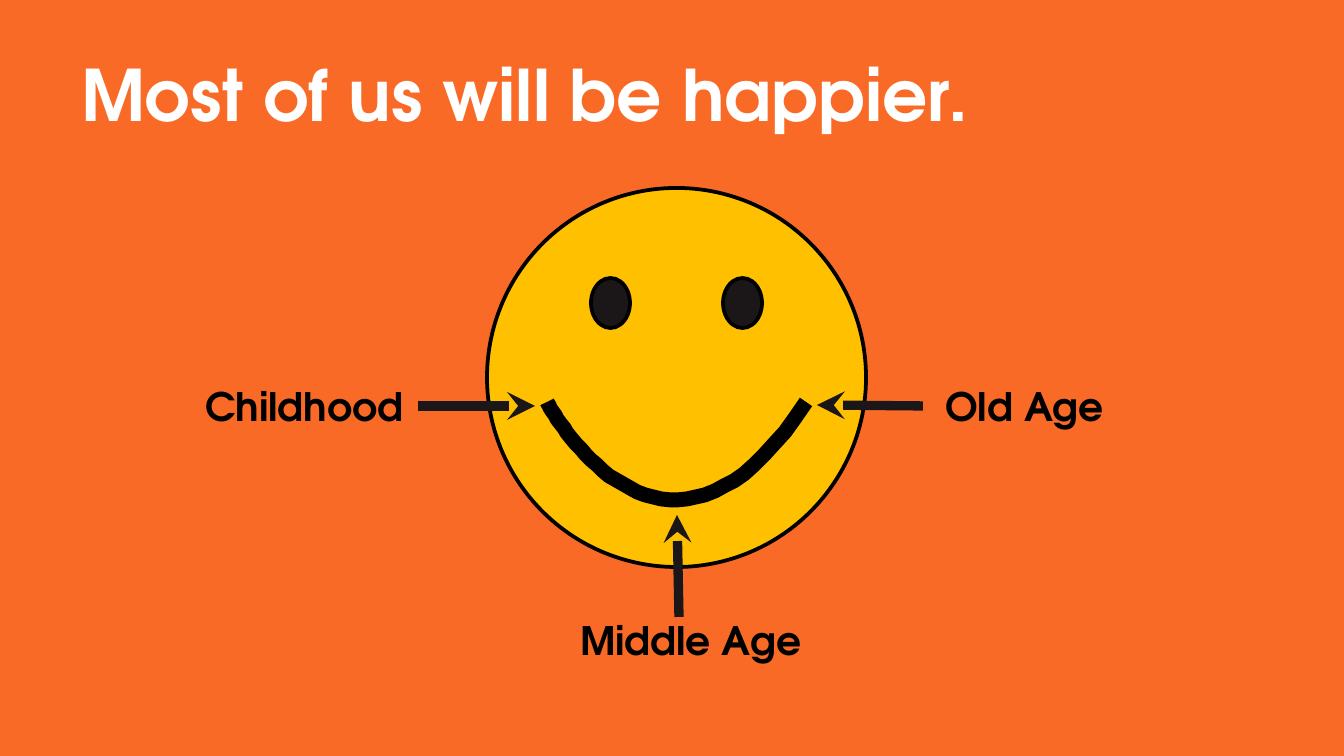
from dataclasses import dataclass

import pptx
import pptx.dml.color
import pptx.enum.shapes
import pptx.enum.text
import pptx.oxml
import pptx.oxml.ns
import pptx.util
from lxml import etree

PX = 914400 / 134.4  # EMU in one px


@dataclass(frozen=True)
class Theme:
    font: str = "TeX Gyre Adventor"
    background: str = "F96A27"
    face: str = "FFC000"
    dark: str = "1B1718"
    black: str = "000000"
    white: str = "FFFFFF"
    title_size: int = 38
    label_size: int = 21
    outline: int = 2
    arrow: int = 5
    smile: int = 8


@dataclass(frozen=True)
class Oval:
    left: int
    top: int
    width: int
    height: int
    color: str


@dataclass(frozen=True)
class Stage:
    name: str
    left: int
    top: int
    width: int
    tail: tuple[int, int]
    tip: tuple[int, int]


THEME = Theme()
EYE_LEFTS = (723, 591)
SMILE = ((547, 402), (547, 402), (663, 622), (806, 402))
SMILE_STEPS = 40
LABEL_HEIGHT = 54
STAGES = (
    Stage("Childhood", 202, 379, 208, (418, 406), (535, 406)),
    Stage("Old Age", 942, 379, 168, (923, 406), (817, 405)),
    Stage("Middle Age", 577, 613, 230, (679, 617), (677, 515)),
)


def emu(px: float) -> int:
    return round(px * PX)


def rgb(color: str) -> pptx.dml.color.RGBColor:
    return pptx.dml.color.RGBColor.from_string(color)


def set_line(shape, color: str, width: int) -> None:
    shape.line.color.rgb = rgb(color)
    shape.line.width = pptx.util.Pt(width)


def write(box, text: str, *, size: int, color: str) -> None:
    frame = box.text_frame
    frame.word_wrap = True
    frame.auto_size = pptx.enum.text.MSO_AUTO_SIZE.NONE
    frame.vertical_anchor = pptx.enum.text.MSO_ANCHOR.MIDDLE
    frame.margin_left = frame.margin_right = emu(3)
    frame.margin_top = frame.margin_bottom = emu(3)
    para = frame.paragraphs[0]
    para.alignment = pptx.enum.text.PP_ALIGN.LEFT
    span = para.add_run()
    span.text = text
    span.font.name = THEME.font
    span.font.size = pptx.util.Pt(size)
    span.font.bold = True
    span.font.color.rgb = rgb(color)


def draw_oval(page, oval: Oval) -> None:
    shape = page.shapes.add_shape(
        pptx.enum.shapes.MSO_SHAPE.OVAL,
        emu(oval.left), emu(oval.top), emu(oval.width), emu(oval.height))
    shape.shadow.inherit = False
    shape.fill.solid()
    shape.fill.fore_color.rgb = rgb(oval.color)
    set_line(shape, THEME.black, THEME.outline)


def curve_point(t: float) -> tuple[float, float]:
    """Point of the smile's cubic Bézier curve at t."""
    weights = ((1 - t) ** 3, 3 * t * (1 - t) ** 2, 3 * t * t * (1 - t), t ** 3)
    return tuple(sum(w * point[axis] for w, point in zip(weights, SMILE))
                 for axis in (0, 1))


def draw_smile(page) -> None:
    start, *rest = [curve_point(step / SMILE_STEPS)
                    for step in range(SMILE_STEPS + 1)]
    builder = page.shapes.build_freeform(*start, scale=PX)
    builder.add_line_segments(rest, close=False)
    smile = builder.convert_to_shape()
    smile.shadow.inherit = False
    smile.fill.background()
    set_line(smile, THEME.black, THEME.smile)


def draw_stage(page, stage: Stage) -> None:
    label = page.shapes.add_textbox(
        emu(stage.left), emu(stage.top), emu(stage.width), emu(LABEL_HEIGHT))
    write(label, stage.name, size=THEME.label_size, color=THEME.black)

    arrow = page.shapes.add_connector(
        pptx.enum.shapes.MSO_CONNECTOR.STRAIGHT,
        *(emu(value) for value in stage.tail + stage.tip))
    set_line(arrow, THEME.dark, THEME.arrow)
    qn = pptx.oxml.ns.qn
    etree.SubElement(arrow.line._get_or_add_ln(), qn("a:tailEnd"), type="stealth")
    etree.SubElement(arrow._element.spPr, qn("a:effectLst"))


def main() -> None:
    deck = pptx.Presentation()
    deck.slide_width, deck.slide_height = emu(1344), emu(756)
    page = deck.slides.add_slide(deck.slide_layouts[5])
    page.background.fill.solid()
    page.background.fill.fore_color.rgb = rgb(THEME.background)

    # Title
    title = page.shapes.title
    title.left, title.top, title.width, title.height = map(emu, (78, 48, 1032, 91))
    write(title, "Most of us will be happier.",
          size=THEME.title_size, color=THEME.white)

    # Smiling face
    draw_oval(page, Oval(487, 188, 379, 379, THEME.face))
    for left in EYE_LEFTS:
        draw_oval(page, Oval(left, 278, 39, 50, THEME.dark))
    draw_smile(page)

    # Stages of life along the smile
    for stage in STAGES:
        draw_stage(page, stage)

    deck.save("out.pptx")


if __name__ == "__main__":
    main()
